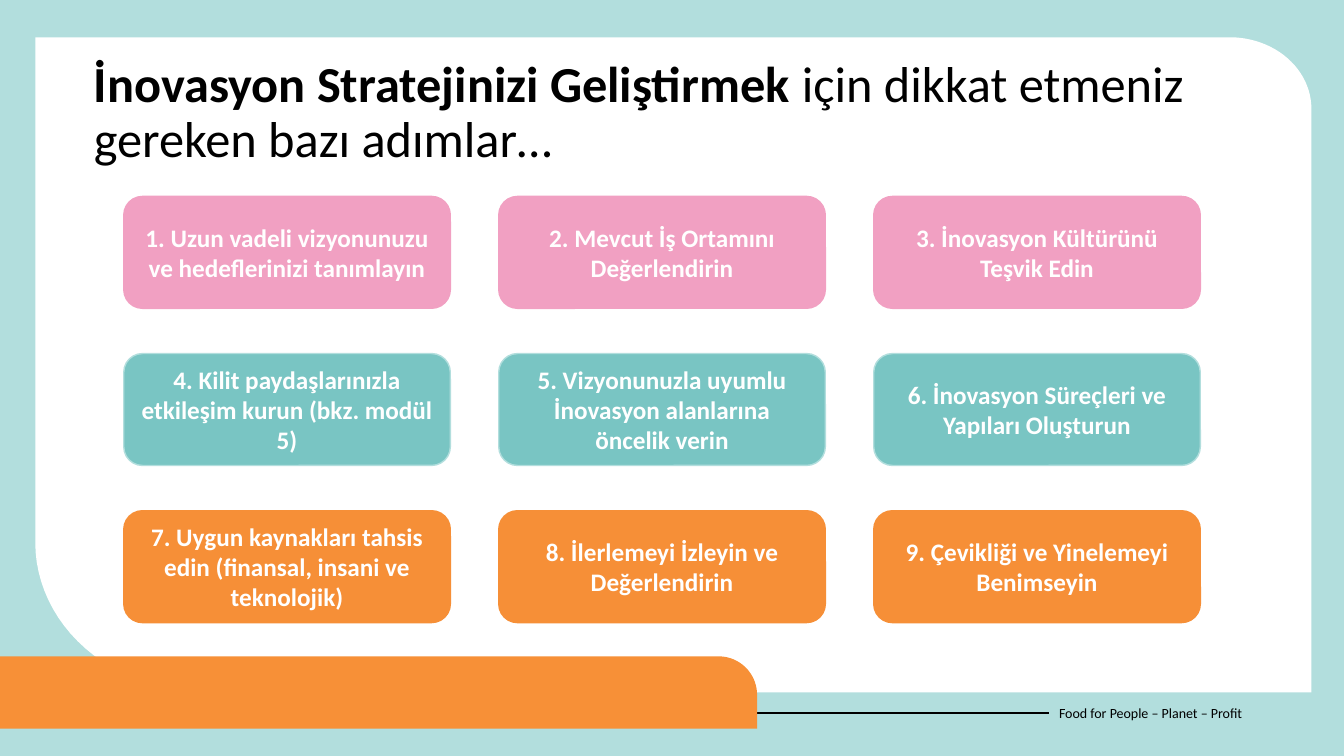
from dataclasses import dataclass
from math import cos, pi, sin

from pptx import Presentation
from pptx.dml.color import RGBColor
from pptx.enum.shapes import MSO_CONNECTOR, MSO_SHAPE
from pptx.enum.text import MSO_ANCHOR, MSO_AUTO_SIZE, PP_ALIGN
from pptx.oxml.ns import qn
from pptx.util import Cm, Pt


@dataclass(frozen=True)
class Theme:
    font: str = "Calibri"
    black: RGBColor = RGBColor.from_string("000000")
    white: RGBColor = RGBColor.from_string("FFFFFF")
    mint: RGBColor = RGBColor.from_string("B2DEDD")
    teal: RGBColor = RGBColor.from_string("79C5C3")
    pink: RGBColor = RGBColor.from_string("F1A0C2")
    orange: RGBColor = RGBColor.from_string("F68F37")
    bar: RGBColor = RGBColor.from_string("F79037")
    title_size: Pt = Pt(36)
    card_size: Pt = Pt(18)
    footer_size: Pt = Pt(10)


THEME = Theme()

STEP_ROWS = [
    (THEME.pink, THEME.pink, [
        "1. Uzun vadeli vizyonunuzu ve hedeflerinizi tanımlayın",
        "2. Mevcut İş Ortamını Değerlendirin",
        "3. İnovasyon Kültürünü Teşvik Edin",
    ]),
    (THEME.teal, THEME.mint, [
        "4. Kilit paydaşlarınızla etkileşim kurun (bkz. modül 5)",
        "5. Vizyonunuzla uyumlu İnovasyon alanlarına öncelik verin",
        "6. İnovasyon Süreçleri ve Yapıları Oluşturun",
    ]),
    (THEME.orange, THEME.orange, [
        "7. Uygun kaynakları tahsis edin (finansal, insani ve teknolojik)",
        "8. İlerlemeyi İzleyin ve Değerlendirin",
        "9. Çevikliği ve Yinelemeyi Benimseyin",
    ]),
]


def style_font(font, size, color, bold=None):
    font.name = THEME.font
    font.size = size
    font.color.rgb = color
    font.bold = bold


def corner_arc(center_x, center_y, radius_x, radius_y, start):
    """Return points of a clockwise quarter ellipse; start is an angle in radians."""
    steps = 24
    angles = [start + pi / 2 * step / steps for step in range(steps + 1)]
    return [(center_x + radius_x * cos(angle), center_y + radius_y * sin(angle))
            for angle in angles]


def add_rounded_panel(slide, left, top, width, height, color, top_right, bottom_left=None):
    """Add a panel whose top right, and optionally bottom left, corner is rounded.

    Each radius is a pair of horizontal and vertical lengths.
    """
    right, bottom = left + width, top + height
    radius_x, radius_y = top_right
    outline = [(left, top)]
    outline += corner_arc(right - radius_x, top + radius_y, radius_x, radius_y, -pi / 2)
    outline.append((right, bottom))
    if bottom_left:
        radius_x, radius_y = bottom_left
        outline += corner_arc(left + radius_x, bottom - radius_y, radius_x, radius_y, pi / 2)
    else:
        outline.append((left, bottom))
    builder = slide.shapes.build_freeform(*outline[0])
    builder.add_line_segments(outline[1:], close=True)
    panel = builder.convert_to_shape()
    panel.shadow.inherit = False
    panel.fill.solid()
    panel.fill.fore_color.rgb = color
    panel.line.fill.background()


def add_frame(slide, width, height):
    background = slide.background.fill
    background.solid()
    background.fore_color.rgb = THEME.mint
    margin, panel_top = Cm(0.89), Cm(0.94)
    add_rounded_panel(slide, margin, panel_top, width - 2 * margin + Cm(0.07),
                      height - panel_top - Cm(1.6), THEME.white,
                      top_right=(Cm(2.06), Cm(1.8)), bottom_left=(Cm(4.32), Cm(3.78)))


def add_footer(slide, left, top, width, height):
    """Add the thin line, the orange bar over it and the tagline at its end."""
    tagline_left = left + Cm(26.44)
    line_top = top + Cm(1.42)
    line = slide.shapes.add_connector(
        MSO_CONNECTOR.STRAIGHT, left, line_top, tagline_left, line_top)
    line.line.color.rgb = THEME.black
    line.line.width = Pt(1.5)
    properties = line.element.spPr
    properties.append(properties.makeelement(qn("a:effectLst"), {}))

    add_rounded_panel(slide, left, top, Cm(19.08), height, THEME.bar,
                      top_right=(Cm(0.97), Cm(0.97)))

    tagline_height = Cm(1.02)
    tagline = slide.shapes.add_textbox(
        tagline_left, line_top - tagline_height // 2,
        left + width - tagline_left, tagline_height).text_frame
    tagline.word_wrap = True
    tagline.vertical_anchor = MSO_ANCHOR.MIDDLE
    paragraph = tagline.paragraphs[0]
    paragraph.text = "Food for People – Planet – Profit"
    style_font(paragraph.font, THEME.footer_size, THEME.black)


def place_title(slide, left, top, width, height):
    title = slide.shapes.title
    title.left, title.top, title.width, title.height = left, top, width, height
    title.element.getparent().append(title.element)  # bring in front of the frame
    frame = title.text_frame
    frame.word_wrap = True
    frame.auto_size = MSO_AUTO_SIZE.NONE
    frame.vertical_anchor = MSO_ANCHOR.TOP
    paragraph = frame.paragraphs[0]
    paragraph.alignment = PP_ALIGN.LEFT
    paragraph.line_spacing = 0.9
    paragraph.space_before = Pt(10)
    style_font(paragraph.font, THEME.title_size, THEME.black)
    for text, bold in [("İnovasyon Stratejinizi Geliştirmek ", True),
                       ("için dikkat etmeniz gereken bazı adımlar…", False)]:
        run = paragraph.add_run()
        run.text = text
        run.font.bold = bold


def add_step_card(slide, left, top, width, height, text, fill, border):
    card = slide.shapes.add_shape(MSO_SHAPE.ROUNDED_RECTANGLE, left, top, width, height)
    card.shadow.inherit = False
    card.fill.solid()
    card.fill.fore_color.rgb = fill
    card.line.color.rgb = border
    card.line.width = Pt(1)
    frame = card.text_frame
    frame.word_wrap = True
    frame.vertical_anchor = MSO_ANCHOR.MIDDLE
    paragraph = frame.paragraphs[0]
    paragraph.text = text
    paragraph.alignment = PP_ALIGN.CENTER
    style_font(paragraph.font, THEME.card_size, THEME.white, bold=True)


def add_step_grid(slide, left, top, width, height):
    card_width, card_height = Cm(8.23), Cm(2.82)
    row_pitch = (height - card_height) // (len(STEP_ROWS) - 1)
    for row, (fill, border, steps) in enumerate(STEP_ROWS):
        column_pitch = (width - card_width) // (len(steps) - 1)
        for column, text in enumerate(steps):
            add_step_card(slide, left + column * column_pitch, top + row * row_pitch,
                          card_width, card_height, text, fill, border)


def main():
    presentation = Presentation()
    presentation.slide_width, presentation.slide_height = Cm(33.87), Cm(19.05)
    title_only = presentation.slide_layouts[5]
    slide = presentation.slides.add_slide(title_only)
    add_frame(slide, presentation.slide_width, presentation.slide_height)
    add_footer(slide, Cm(0), Cm(16.54), Cm(33.38), Cm(1.82))
    place_title(slide, Cm(2.11), Cm(1.37), Cm(29.44), Cm(2.24))
    add_step_grid(slide, Cm(3.12), Cm(4.95), Cm(27.13), Cm(10.74))
    presentation.save("out.pptx")


if __name__ == "__main__":
    main()
